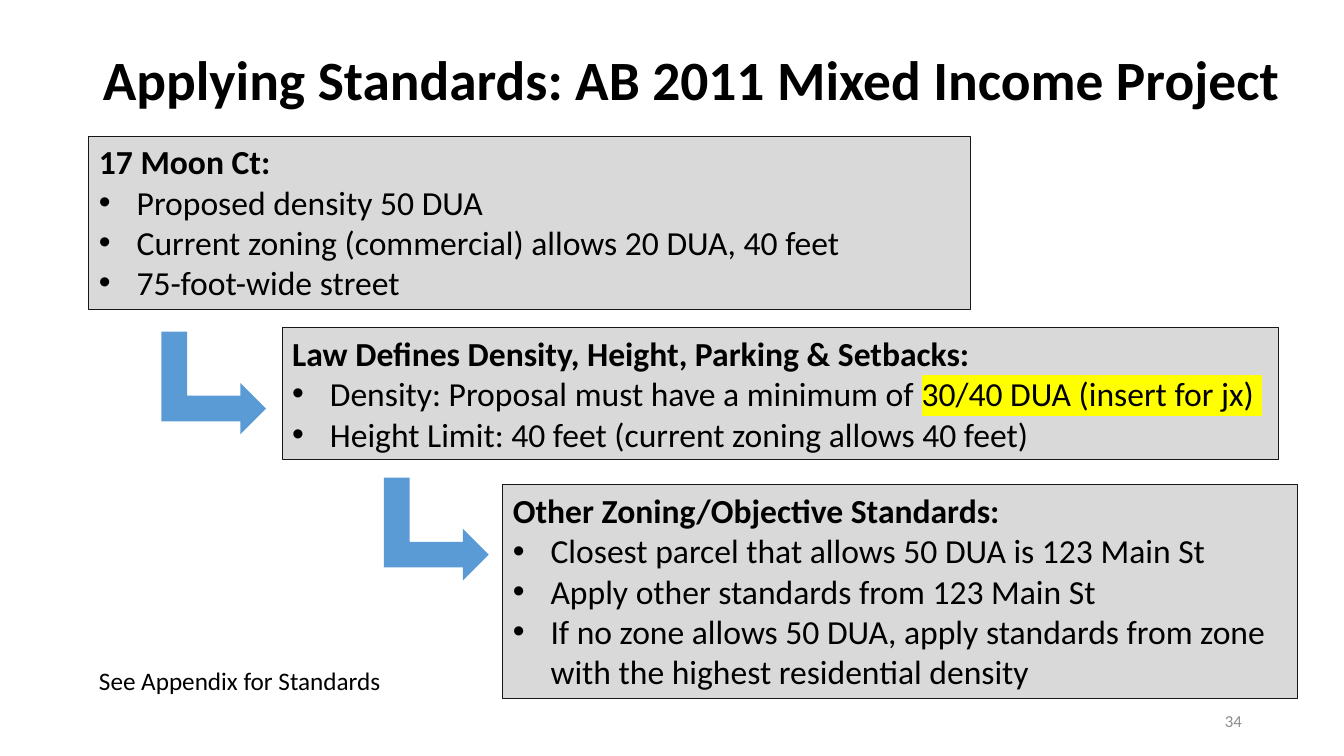
from dataclasses import dataclass

from lxml import etree
from pptx import Presentation
from pptx import util as u
from pptx.dml.color import RGBColor
from pptx.enum import shapes, text
from pptx.oxml.ns import qn


@dataclass(frozen=True)
class Theme:
    font: str = "Calibri"
    ink: str = "000000"
    muted: str = "8C8C8C"
    panel: str = "D9D9D9"
    border: str = "181717"
    arrow: str = "5B9BD5"
    marker: str = "FFFF00"
    title_size: float = 39.6
    body_size: float = 24
    note_size: float = 18
    number_size: float = 12
    indent: float = 0.95


class StandardsSlide:
    def __init__(self, deck, theme):
        self.theme = theme
        self.page = deck.slides.add_slide(deck.slide_layouts.get_by_name("Comparison"))
        self.bodies = [box for box in self.page.placeholders
                       if box.placeholder_format.idx != 0]

    def place(self, box, area, anchor=text.MSO_ANCHOR.TOP):
        """Set the position of a text box and return its cleared text frame."""
        box.left, box.top, box.width, box.height = map(u.Cm, area)
        frame = box.text_frame
        frame.word_wrap = True
        frame.auto_size = text.MSO_AUTO_SIZE.NONE
        frame.vertical_anchor = anchor
        return frame

    def format_para(self, para, align=text.PP_ALIGN.LEFT, spacing=1.0, bullet=False):
        para.alignment = align
        para.line_spacing = spacing
        para.space_before = para.space_after = u.Pt(0)
        props = para._p.get_or_add_pPr()
        indent = u.Cm(self.theme.indent) if bullet else 0
        props.set("marL", str(indent))
        props.set("indent", str(-indent))
        if bullet:
            etree.SubElement(props, qn("a:buFont"), typeface="Arial")
            etree.SubElement(props, qn("a:buChar"), char="•")
        else:
            etree.SubElement(props, qn("a:buNone"))

    def add_span(self, para, words, size, color=None, bold=False, marked=False):
        span = para.add_run()
        span.text = words
        span.font.name = self.theme.font
        span.font.size = u.Pt(size)
        span.font.bold = bold
        span.font.color.rgb = RGBColor.from_string(color or self.theme.ink)
        if marked:
            highlight = etree.Element(qn("a:highlight"))
            etree.SubElement(highlight, qn("a:srgbClr"), val=self.theme.marker)
            span.font._element.find(qn("a:solidFill")).addnext(highlight)

    def title(self, words, area):
        frame = self.place(self.page.shapes.title, area)
        frame.margin_top = u.Cm(0.3)
        para = frame.paragraphs[0]
        self.format_para(para, spacing=0.9)
        self.add_span(para, words, self.theme.title_size, bold=True)

    def panel(self, heading, items, area):
        """Fill a body placeholder; each item is a list of (words, marked) spans."""
        box = self.bodies.pop(0)
        frame = self.place(box, area)
        box.fill.solid()
        box.fill.fore_color.rgb = RGBColor.from_string(self.theme.panel)
        box.line.color.rgb = RGBColor.from_string(self.theme.border)
        box.line.width = u.Pt(0.75)
        para = frame.paragraphs[0]
        self.format_para(para)
        self.add_span(para, heading, self.theme.body_size, bold=True)
        for item in items:
            para = frame.add_paragraph()
            self.format_para(para, bullet=True)
            for words, marked in item:
                self.add_span(para, words, self.theme.body_size, marked=marked)

    def arrow(self, left, top):
        arrow = self.page.shapes.add_shape(
            shapes.MSO_SHAPE.BENT_UP_ARROW,
            u.Cm(left), u.Cm(top), u.Cm(2.59), u.Cm(2.64))
        arrow.rotation = 90
        arrow.shadow.inherit = False
        arrow.fill.solid()
        arrow.fill.fore_color.rgb = RGBColor.from_string(self.theme.arrow)
        arrow.line.fill.background()

    def note(self, words, area):
        para = self.place(self.bodies.pop(0), area).paragraphs[0]
        self.format_para(para)
        self.add_span(para, words, self.theme.note_size)

    def number(self, words, area):
        box = self.page.shapes.add_textbox(*map(u.Cm, area))
        para = self.place(box, area, text.MSO_ANCHOR.MIDDLE).paragraphs[0]
        self.format_para(para, align=text.PP_ALIGN.RIGHT)
        self.add_span(para, words, self.theme.number_size, self.theme.muted)


PANELS = [
    ("17 Moon Ct:", [
        [("Proposed density 50 DUA", False)],
        [("Current zoning (commercial) allows 20 DUA, 40 feet", False)],
        [("75-foot-wide street", False)],
    ], (2.24, 3.43, 22.23, 4.37)),
    ("Law Defines Density, Height, Parking & Setbacks:", [
        [("Density: Proposal must have a minimum of ", False),
         ("30/40 DUA (insert for jx) ", True)],
        [("Height Limit: 40 feet (current zoning allows 40 feet)", False)],
    ], (7.11, 8.26, 25.12, 3.33)),
    ("Other Zoning/Objective Standards:", [
        [("Closest parcel that allows 50 DUA is 123 Main St", False)],
        [("Apply other standards from 123 Main St", False)],
        [("If no zone allows 50 DUA, apply standards from zone "
          "with the highest residential density", False)],
    ], (12.67, 12.22, 20.02, 5.38)),
]
ARROWS = [(4.09, 8.33), (9.7, 12.01)]


def main():
    deck = Presentation()
    deck.slide_width, deck.slide_height = u.Cm(33.87), u.Cm(19.05)
    slide = StandardsSlide(deck, Theme())
    slide.title("Applying Standards: AB 2011 Mixed Income Project",
                (2.34, 1.02, 31.53, 3.68))
    for heading, items, area in PANELS:
        slide.panel(heading, items, area)
    for left, top in ARROWS:
        slide.arrow(left, top)
    slide.note("See Appendix for Standards", (2.24, 16.64, 9.8, 1.02))
    slide.number("34", (23.93, 17.65, 7.62, 1.02))
    deck.save("out.pptx")


if __name__ == "__main__":
    main()
